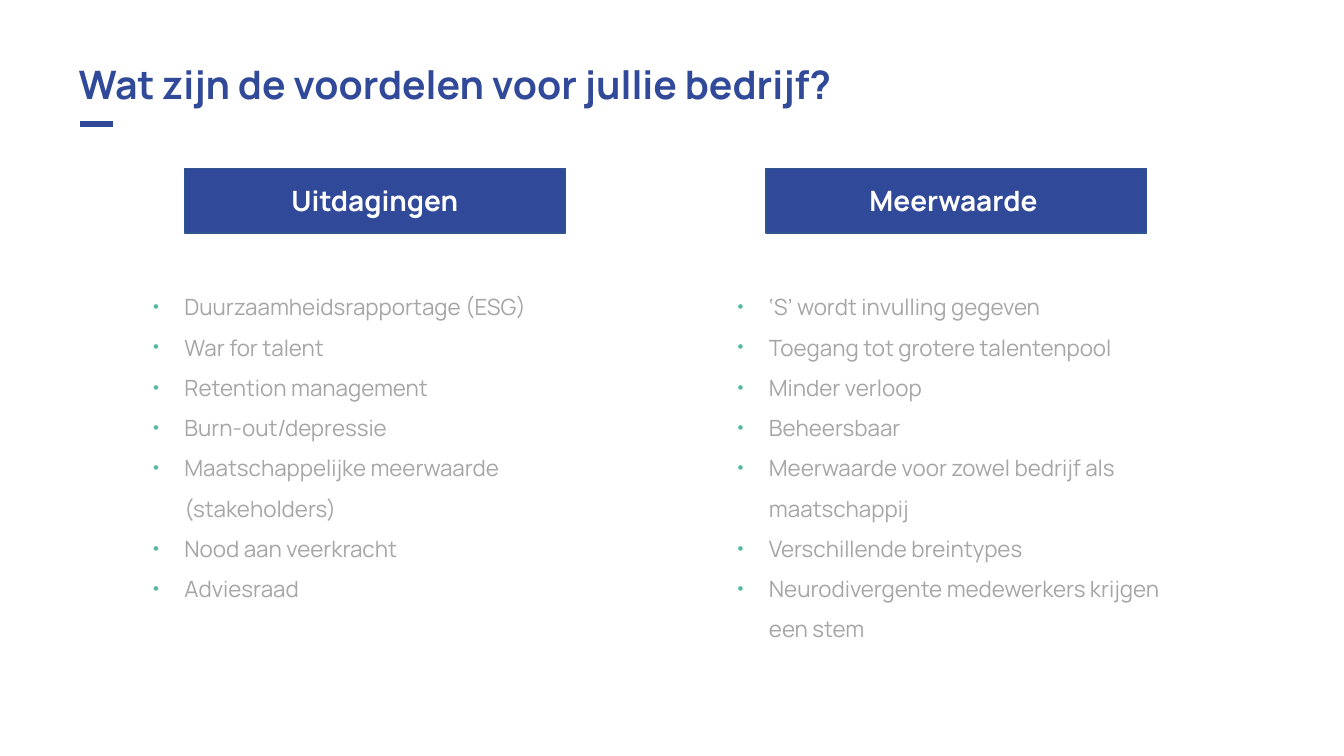
"""Build a slide that sets challenges beside added value for a company."""
from lxml import etree
from pptx import Presentation
from pptx.dml.color import RGBColor
from pptx.enum.shapes import MSO_CONNECTOR, MSO_SHAPE
from pptx.enum.text import MSO_ANCHOR, MSO_AUTO_SIZE, PP_ALIGN
from pptx.oxml.ns import qn
from pptx.util import Cm, Pt

LINE = MSO_CONNECTOR.STRAIGHT
RECT = MSO_SHAPE.RECTANGLE
MIDDLE = MSO_ANCHOR.MIDDLE
FIXED, GROW = MSO_AUTO_SIZE.NONE, MSO_AUTO_SIZE.SHAPE_TO_FIT_TEXT
LEFT, CENTER = PP_ALIGN.LEFT, PP_ALIGN.CENTER

BLUE, EDGE, GREEN = "314999", "325491", "51B9A4"
GREY, WHITE = "A6A6A6", "FFFFFF"
HANG = Cm(0.79)

COLUMNS = [
    ("Uitdagingen", 4.65, 3.61, 11.71, 8.38, [
        "Duurzaamheidsrapportage (ESG)",
        "War for talent",
        "Retention management",
        "Burn-out/depressie",
        "Maatschappelijke meerwaarde (stakeholders)",
        "Nood aan veerkracht",
        "Adviesraad",
    ]),
    ("Meerwaarde ", 19.3, 18.34, 11.15, 9.4, [
        "‘S’ wordt invulling gegeven",
        "Toegang tot grotere talentenpool",
        "Minder verloop",
        "Beheersbaar",
        "Meerwaarde voor zowel bedrijf als maatschappij",
        "Verschillende breintypes",
        "Neurodivergente medewerkers krijgen een stem",
    ]),
]


def paint(color, tone):
    color.rgb = RGBColor.from_string(tone)


def write(para, text, size, tone, bold, align, spacing):
    para.alignment = align
    para.line_spacing = spacing
    run = para.add_run()
    run.text = text
    run.font.name = "Manrope"
    run.font.size = Pt(size)
    run.font.bold = bold
    paint(run.font.color, tone)


deck = Presentation()
deck.slide_width, deck.slide_height = Cm(33.87), Cm(19.05)
slide = deck.slides.add_slide(deck.slide_layouts[5])
shapes = slide.shapes

title = shapes.title
title.left, title.top = Cm(1.73), Cm(0.69)
title.width, title.height = Cm(22.73), Cm(2.97)
frame = title.text_frame
frame.auto_size = FIXED
frame.vertical_anchor = MIDDLE
write(frame.paragraphs[0], "Wat zijn de voordelen voor jullie bedrijf?",
      28, BLUE, True, LEFT, 0.9)

dash = shapes.add_connector(LINE, Cm(2.01), Cm(3.12), Cm(2.84), Cm(3.12))
dash.line.width = Pt(4)
paint(dash.line.color, BLUE)
etree.SubElement(dash._element.spPr, qn("a:effectLst"))

for head, edge, left, width, height, items in COLUMNS:
    box = shapes.add_shape(RECT, Cm(edge), Cm(4.24), Cm(9.6), Cm(1.63))
    box.shadow.inherit = False
    box.fill.solid()
    paint(box.fill.fore_color, BLUE)
    box.line.width = Pt(1)
    paint(box.line.color, EDGE)
    frame = box.text_frame
    frame.vertical_anchor = MIDDLE
    write(frame.paragraphs[0], head, 20, WHITE, True, CENTER, 1.0)

    area = shapes.add_textbox(Cm(left), Cm(6.93), Cm(width), Cm(height))
    frame = area.text_frame
    frame.word_wrap = True
    frame.auto_size = GROW
    for index, item in enumerate(items):
        para = frame.add_paragraph() if index else frame.paragraphs[0]
        props = para._p.get_or_add_pPr()
        props.set("marL", str(HANG))
        props.set("indent", str(-HANG))
        tint = etree.SubElement(props, qn("a:buClr"))
        etree.SubElement(tint, qn("a:srgbClr"), val=GREEN)
        etree.SubElement(props, qn("a:buSzPct"), val="75000")
        etree.SubElement(props, qn("a:buFont"), typeface="Arial")
        etree.SubElement(props, qn("a:buChar"), char="•")
        write(para, item, 16, GREY, False, LEFT, 1.5)

deck.save("out.pptx")
